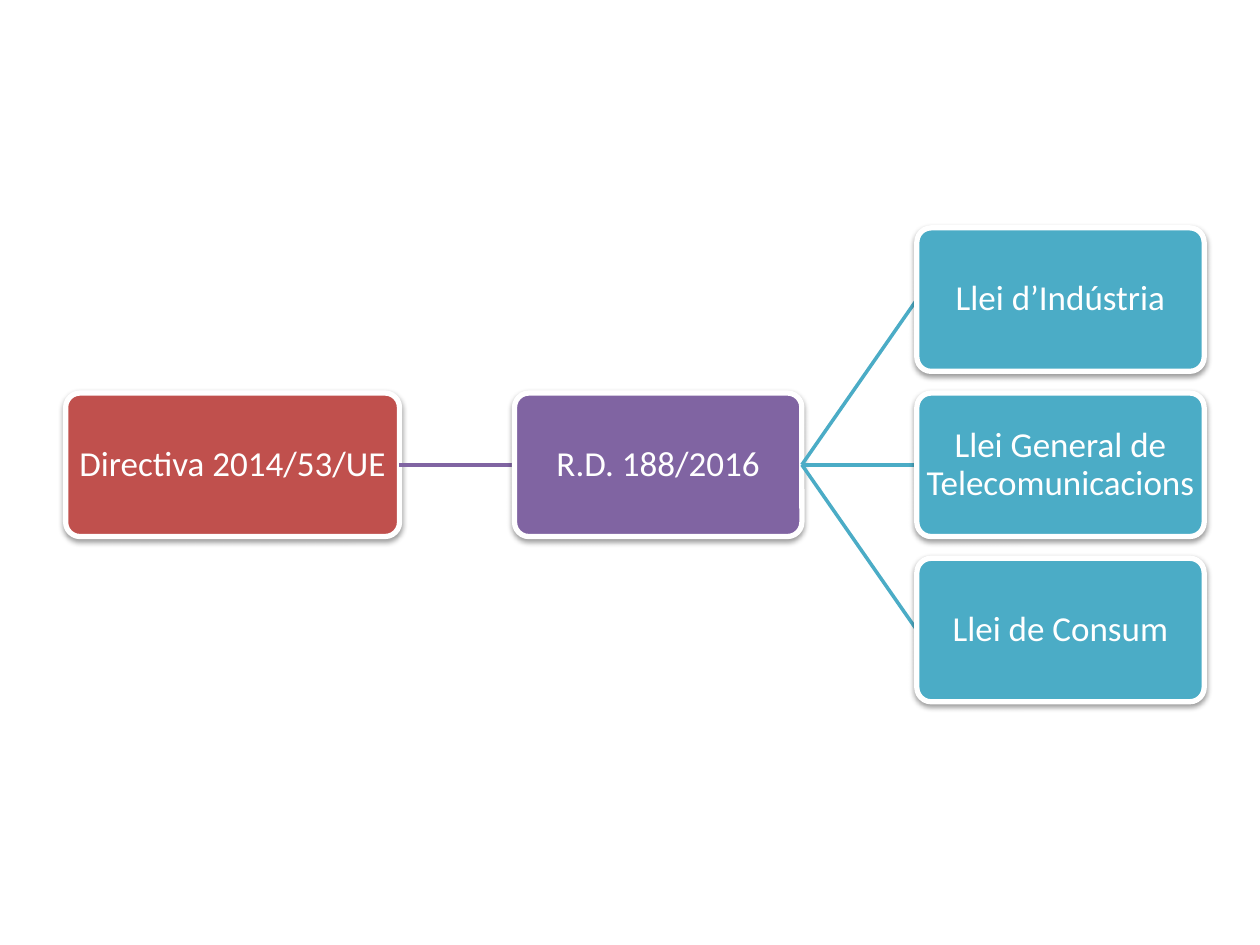
from lxml import etree
from pptx import Presentation
from pptx.dml.color import RGBColor
from pptx.enum import shapes, text
from pptx.oxml import parse_xml
from pptx.oxml.ns import nsdecls, qn
from pptx.util import Pt

COLORS = {
    "directive": "C0504D",
    "decree": "8064A2",
    "law": "4BACC6",
    "white": "FFFFFF",
    "shadow": "000000",
}
LEFT_SITE, RIGHT_SITE = 1, 3


class Diagram:
    """Horizontal hierarchy of rounded boxes on the current page."""

    font_name = "Calibri"
    font_size = 20
    box_height = 82
    inset = 0.8

    def __init__(self, page):
        self.page = page

    def color(self, name):
        return RGBColor.from_string(COLORS[name])

    def add_shadow(self, box):
        box.shadow.inherit = False
        effects = box._element.spPr.find(qn("a:effectLst"))
        effects.append(parse_xml(
            f'<a:outerShdw {nsdecls("a")} blurRad="{Pt(3.1)}" dist="{Pt(1.6)}" '
            f'dir="5400000" rotWithShape="0"><a:srgbClr val="{COLORS["shadow"]}">'
            '<a:alpha val="38000"/></a:srgbClr></a:outerShdw>'))

    def add_box(self, label, color, left, middle, width):
        box = self.page.shapes.add_shape(
            shapes.MSO_SHAPE.ROUNDED_RECTANGLE, Pt(left),
            Pt(middle - self.box_height / 2), Pt(width), Pt(self.box_height))
        box.adjustments[0] = 0.1
        box.fill.solid()
        box.fill.fore_color.rgb = self.color(color)
        box.line.color.rgb = self.color("white")
        box.line.width = Pt(3)
        self.add_shadow(box)

        frame = box.text_frame
        frame.word_wrap = True
        frame.vertical_anchor = text.MSO_ANCHOR.MIDDLE
        frame.margin_left = frame.margin_right = Pt(self.inset)
        frame.margin_top = frame.margin_bottom = Pt(self.inset)
        para = frame.paragraphs[0]
        para.text = label
        para.alignment = text.PP_ALIGN.CENTER
        para.line_spacing = 0.9
        para.font.name = self.font_name
        para.font.size = Pt(self.font_size)
        para.font.color.rgb = self.color("white")
        return box

    def add_child(self, parent, label, color, left, middle, width):
        """Add a box linked to its parent by a line that lies behind the box."""
        link = self.page.shapes.add_connector(
            shapes.MSO_CONNECTOR.STRAIGHT, 0, 0, Pt(left), Pt(middle))
        link.line.color.rgb = self.color(color)
        link.line.width = Pt(2)
        etree.SubElement(link._element.spPr, qn("a:effectLst"))
        child = self.add_box(label, color, left, middle, width)
        link.begin_connect(parent, RIGHT_SITE)
        link.end_connect(child, LEFT_SITE)
        return child


def main():
    deck = Presentation()
    deck.slide_width, deck.slide_height = Pt(720), Pt(540)
    diagram = Diagram(deck.slides.add_slide(deck.slide_layouts[6]))

    middle, row_pitch, gap = 265.6, 94.4, 65.7
    directive_left, directive_width, box_width = 37.5, 190.8, 164.2
    decree_left = directive_left + directive_width + gap
    law_left = decree_left + box_width + gap

    directive = diagram.add_box("Directiva 2014/53/UE", "directive",
                                directive_left, middle, directive_width)
    decree = diagram.add_child(directive, "R.D. 188/2016", "decree",
                               decree_left, middle, box_width)
    laws = ["Llei d’Indústria", "Llei General de Telecomunicacions", "Llei de Consum"]
    for row, law in enumerate(laws, start=-1):
        diagram.add_child(decree, law, "law", law_left,
                          middle + row * row_pitch, box_width)

    deck.save("out.pptx")


if __name__ == "__main__":
    main()
